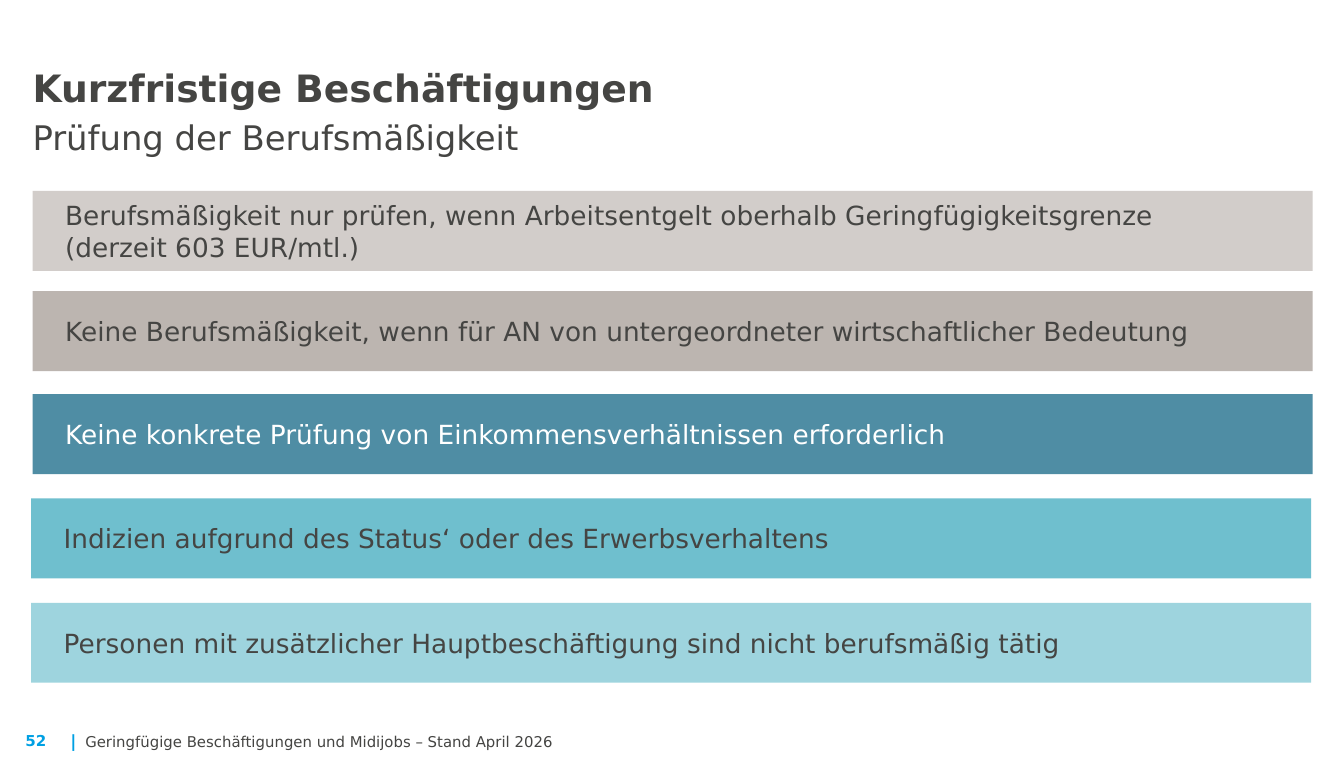
from pptx import Presentation
from pptx.dml.color import RGBColor
from pptx.enum.shapes import MSO_SHAPE
from pptx.enum.text import MSO_ANCHOR, PP_ALIGN
from pptx.util import Inches, Pt

FONT = "DejaVu Sans"
COLORS = {
    "text": "454543", "white": "FFFFFF", "accent": "00A0E3",
    "light": "D2CDCA", "taupe": "BCB5B0",
    "blue": "4F8DA4", "teal": "6FBFCE", "aqua": "9ED4DE",
}
BARS = [
    (0.24, 1.41, "light", "text",
     ["Berufsmäßigkeit nur prüfen, wenn Arbeitsentgelt oberhalb Geringfügigkeitsgrenze",
      "(derzeit 603 EUR/mtl.)"]),
    (0.24, 2.15, "taupe", "text",
     ["Keine Berufsmäßigkeit, wenn für AN von untergeordneter wirtschaftlicher Bedeutung"]),
    (0.24, 2.91, "blue", "white",
     ["Keine konkrete Prüfung von Einkommensverhältnissen erforderlich"]),
    (0.23, 3.68, "teal", "text",
     ["Indizien aufgrund des Status‘ oder des Erwerbsverhaltens"]),
    (0.23, 4.45, "aqua", "text",
     ["Personen mit zusätzlicher Hauptbeschäftigung sind nicht berufsmäßig tätig"]),
]


def color(name):
    """Return the named colour."""
    return RGBColor.from_string(COLORS[name])


def write(para, text, size=14, fill="text", bold=False):
    """Add formatted text to a paragraph."""
    para.alignment = PP_ALIGN.LEFT
    run = para.add_run()
    run.text = text
    font = run.font
    font.name, font.size, font.bold = FONT, Pt(size), bold
    font.color.rgb = color(fill)


def setup(frame, anchor, side=0, edge=0, wrap=True):
    """Set wrapping, anchor and margins of a text frame."""
    frame.word_wrap = wrap
    frame.vertical_anchor = anchor
    frame.margin_left = frame.margin_right = Inches(side)
    frame.margin_top = frame.margin_bottom = Inches(edge)


def add_text(slide, left, top, width, height, anchor=MSO_ANCHOR.BOTTOM, **layout):
    """Add a text box and return its first paragraph."""
    box = slide.shapes.add_textbox(
        Inches(left), Inches(top), Inches(width), Inches(height))
    setup(box.text_frame, anchor, **layout)
    return box.text_frame.paragraphs[0]


def add_bar(slide, left, top, fill, ink, lines):
    """Add a full-width coloured bar with its statement."""
    bar = slide.shapes.add_shape(
        MSO_SHAPE.RECTANGLE, Inches(left), Inches(top), Inches(9.45), Inches(0.59))
    bar.shadow.inherit = False
    bar.fill.solid()
    bar.fill.fore_color.rgb = color(fill)
    bar.line.fill.background()
    frame = bar.text_frame
    setup(frame, MSO_ANCHOR.MIDDLE, side=0.24, edge=0.21)
    for index, text in enumerate(lines):
        para = frame.add_paragraph() if index else frame.paragraphs[0]
        write(para, text, fill=ink)


def add_title(slide):
    """Add the heading and its subtitle."""
    title = add_text(slide, 0.24, 0.45, 8.51, 0.71)
    title.line_spacing = Pt(24.8)
    write(title, "Kurzfristige Beschäftigungen", size=20, bold=True)
    title.add_line_break()
    write(title, "Prüfung der Berufsmäßigkeit", size=18)


def add_footer(slide):
    """Add the page number, divider and footer text."""
    divider = add_text(slide, 0.52, 5.39, 0.06, 0.15, wrap=False)
    write(divider, "|", size=8.9, fill="accent", bold=True)
    footer = add_text(slide, 0.63, 5.39, 9.06, 0.15)
    write(footer, "Geringfügige Beschäftigungen und Midijobs – Stand April 2026", size=7.9)
    number = add_text(slide, 0.09, 5.35, 0.36, 0.24, anchor=MSO_ANCHOR.TOP,
                      side=0.1, edge=0.05, wrap=False)
    write(number, "52", size=8, fill="accent", bold=True)


def main():
    """Build and save the slide."""
    deck = Presentation()
    deck.slide_width, deck.slide_height = Inches(635 / 64), Inches(45 / 8)
    slide = deck.slides.add_slide(deck.slide_layouts[6])
    add_title(slide)
    for bar in BARS:
        add_bar(slide, *bar)
    add_footer(slide)
    deck.save("out.pptx")


if __name__ == "__main__":
    main()
